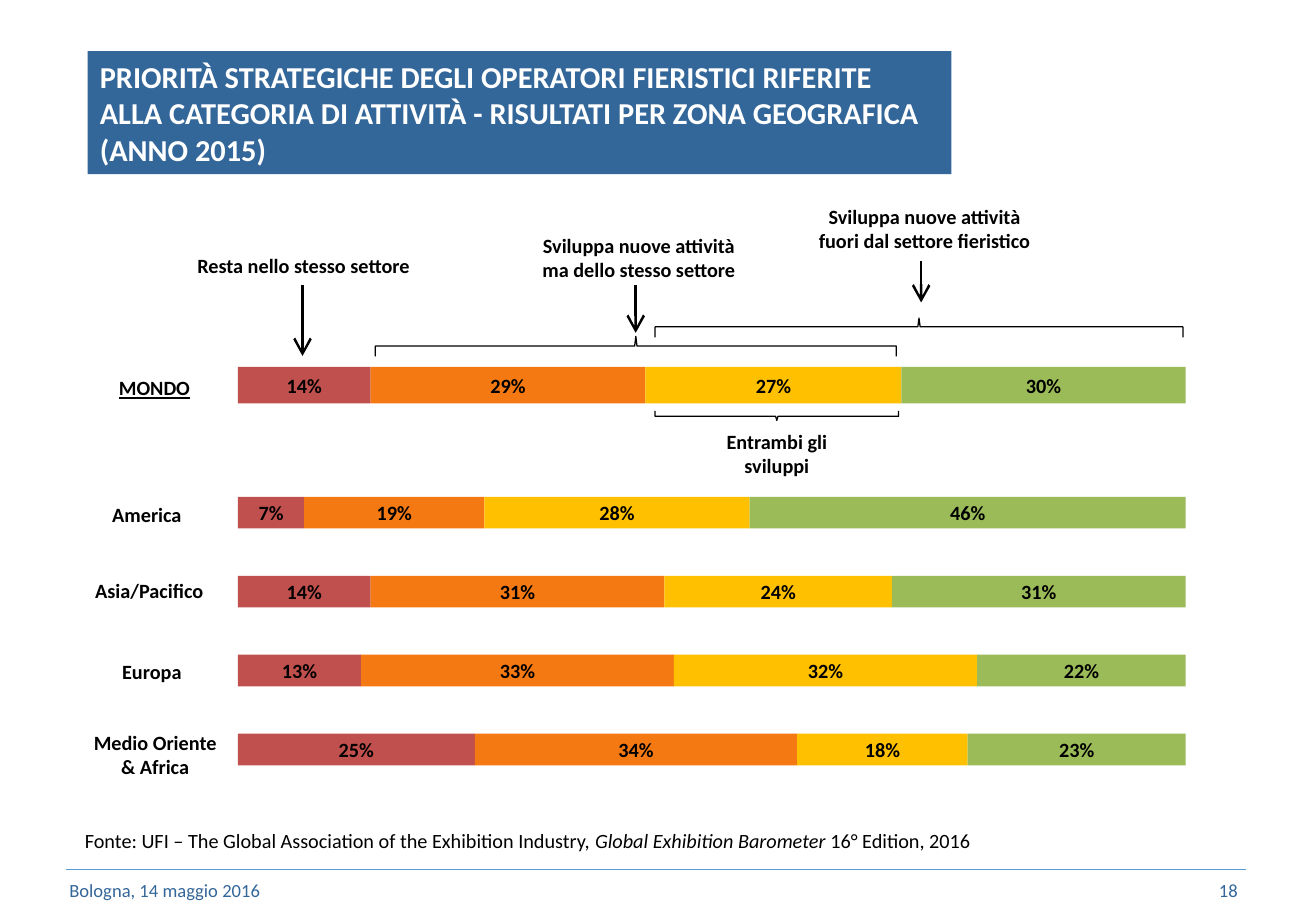
from lxml.etree import SubElement
from pptx import Presentation
from pptx.dml.color import RGBColor
from pptx.enum.shapes import MSO_CONNECTOR, MSO_SHAPE
from pptx.enum.text import MSO_ANCHOR, PP_ALIGN
from pptx.oxml.ns import qn
from pptx.util import Pt

COLORS = {
    "blue": "336699", "rule": "5B9BD5", "black": "000000", "white": "FFFFFF",
    "same": "C0504D", "inside": "F57913", "both": "FFC000", "outside": "9BBB59",
}
STRATEGIES = ("same", "inside", "both", "outside")
BAR_LEFT, BAR_WIDTH = 141, 561.8
WORLD_TOP, WORLD_HEIGHT = 217.5, 21.6
AREA_TOP, AREA_STEP, AREA_HEIGHT = 294.5, 46.8, 18.8
# Name, centre and top of the name, shares in the order of STRATEGIES
WORLD = ("MONDO", 91.5, 222.5, (14, 29, 27, 30))
AREAS = (
    ("America", 87, 298, (7, 19, 28, 46)),
    ("Asia/Pacifico", 88.5, 342.7, (14, 31, 24, 31)),
    ("Europa", 90, 391, (13, 33, 32, 22)),
    ("Medio Oriente\n& Africa", 92, 432.7, (25, 34, 18, 23)),
)


def rgb(name):
    return RGBColor.from_string(COLORS[name])


class SlideBuilder:
    font = "Calibri"

    def __init__(self, slide):
        self.slide = slide
        self.shapes = slide.shapes

    def fill_text(self, shape, runs, size=12, color="black", bold=False, underline=None,
                  align=PP_ALIGN.LEFT, anchor=MSO_ANCHOR.TOP, inset=(0, 0)):
        """Add (text, italic) runs; a newline in a text starts a paragraph."""
        frame = shape.text_frame
        frame.word_wrap = True
        frame.vertical_anchor = anchor
        frame.margin_left = frame.margin_right = Pt(inset[0])
        frame.margin_top = frame.margin_bottom = Pt(inset[1])
        paragraph = frame.paragraphs[0]
        paragraph.alignment = align
        for text, italic in runs:
            for index, line in enumerate(text.split("\n")):
                if index:
                    paragraph = frame.add_paragraph()
                    paragraph.alignment = align
                run = paragraph.add_run()
                run.text = line
                font = run.font
                font.name, font.size, font.bold = self.font, Pt(size), bold
                font.italic, font.underline = italic, underline
                font.color.rgb = rgb(color)

    def title(self, text, left, top, width, height):
        title = self.shapes.title
        title.left, title.top, title.width, title.height = map(Pt, (left, top, width, height))
        title.fill.solid()
        title.fill.fore_color.rgb = rgb("blue")
        self.fill_text(title, [(text, False)], 18, "white", bold=True,
                       anchor=MSO_ANCHOR.MIDDLE, inset=(7.2, 3.6))

    def text(self, runs, left, top, width, height, **style):
        box = self.shapes.add_textbox(*map(Pt, (left, top, width, height)))
        self.fill_text(box, runs, **style)

    def label(self, text, center, top, width, underline=None):
        height = 14.4 * (text.count("\n") + 1)
        self.text([(text, False)], center - width / 2, top, width, height,
                  bold=True, underline=underline, align=PP_ALIGN.CENTER)

    def bar(self, shares, top, height):
        left = BAR_LEFT
        for strategy, share in zip(STRATEGIES, shares):
            width = BAR_WIDTH * share / 100
            part = self.shapes.add_shape(
                MSO_SHAPE.RECTANGLE, *map(Pt, (left, top, width, height)))
            part.shadow.inherit = False
            part.fill.solid()
            part.fill.fore_color.rgb = rgb(strategy)
            part.line.fill.background()
            self.fill_text(part, [(f"{share}%", False)], bold=True,
                           align=PP_ALIGN.CENTER, anchor=MSO_ANCHOR.MIDDLE)
            left += width

    def line(self, x1, y1, x2, y2, color, weight, arrow=False):
        line = self.shapes.add_connector(MSO_CONNECTOR.STRAIGHT, *map(Pt, (x1, y1, x2, y2)))
        line.line.color.rgb = rgb(color)
        line.line.width = Pt(weight)
        properties = line._element.spPr
        if arrow:
            SubElement(properties.find(qn("a:ln")), qn("a:tailEnd"),
                       type="arrow", w="lg", len="lg")
        SubElement(properties, qn("a:effectLst"))

    def bracket(self, left, right, end_y, level, tip_y):
        middle = (left + right) / 2
        points = [(left, end_y), (left, level), (middle - 0.7, level), (middle, tip_y),
                  (middle + 0.7, level), (right, level), (right, end_y)]
        start, *rest = [(Pt(x), Pt(y)) for x, y in points]
        outline = self.shapes.build_freeform(*start)
        outline.add_line_segments(rest, close=False)
        bracket = outline.convert_to_shape()
        bracket.shadow.inherit = False
        bracket.fill.background()
        bracket.line.color.rgb = rgb("black")
        bracket.line.width = Pt(0.75)


def main():
    presentation = Presentation()
    presentation.slide_width, presentation.slide_height = Pt(780), Pt(540)
    builder = SlideBuilder(presentation.slides.add_slide(presentation.slide_layouts[5]))

    builder.title("PRIORITÀ STRATEGICHE DEGLI OPERATORI FIERISTICI RIFERITE ALLA CATEGORIA "
                  "DI ATTIVITÀ - RISULTATI PER ZONA GEOGRAFICA (ANNO 2015)",
                  52, 30.3, 512, 73)

    name, center, name_top, shares = WORLD
    builder.label(name, center, name_top, 85, underline=True)
    builder.bar(shares, WORLD_TOP, WORLD_HEIGHT)
    for row, (name, center, name_top, shares) in enumerate(AREAS):
        builder.label(name, center, name_top, 85)
        builder.bar(shares, AREA_TOP + row * AREA_STEP, AREA_HEIGHT)

    builder.label("Resta nello stesso settore", 180, 150, 170)
    builder.label("Sviluppa nuove attività\nma dello stesso settore", 378.7, 138.3, 170)
    builder.label("Sviluppa nuove attività\nfuori dal settore fieristico", 548, 121, 146)
    builder.label("Entrambi gli sviluppi", 460.5, 254.3, 83)

    for x, top, bottom in ((179.3, 169.2, 211), (376.8, 169.2, 197.3), (546, 154.8, 179.3)):
        builder.line(x, top, x, bottom, "black", 1.5, arrow=True)
    builder.bracket(222.5, 531.3, 211.3, 205.2, 199.4)
    builder.bracket(388.3, 701.2, 200, 193.8, 188.6)
    builder.bracket(388.3, 532.6, 243.5, 246.8, 249.2)

    builder.text([("Fonte: UFI – The Global Association of the Exhibition Industry, ", False),
                  ("Global Exhibition Barometer", True),
                  (" 16° Edition, 2016", False)],
                 43.2, 487.4, 652, 21.6, inset=(7.2, 3.6))
    builder.line(39, 515.5, 738.7, 515.5, "rule", 0.25)
    footer = {"size": 11, "color": "blue", "anchor": MSO_ANCHOR.MIDDLE, "inset": (7.2, 3.6)}
    builder.text([("Bologna, 14 maggio 2016", False)], 34, 515.5, 195, 24.5, **footer)
    builder.text([("18", False)], 558.7, 513.4, 182, 28.8, align=PP_ALIGN.RIGHT, **footer)

    presentation.save("out.pptx")


if __name__ == "__main__":
    main()
